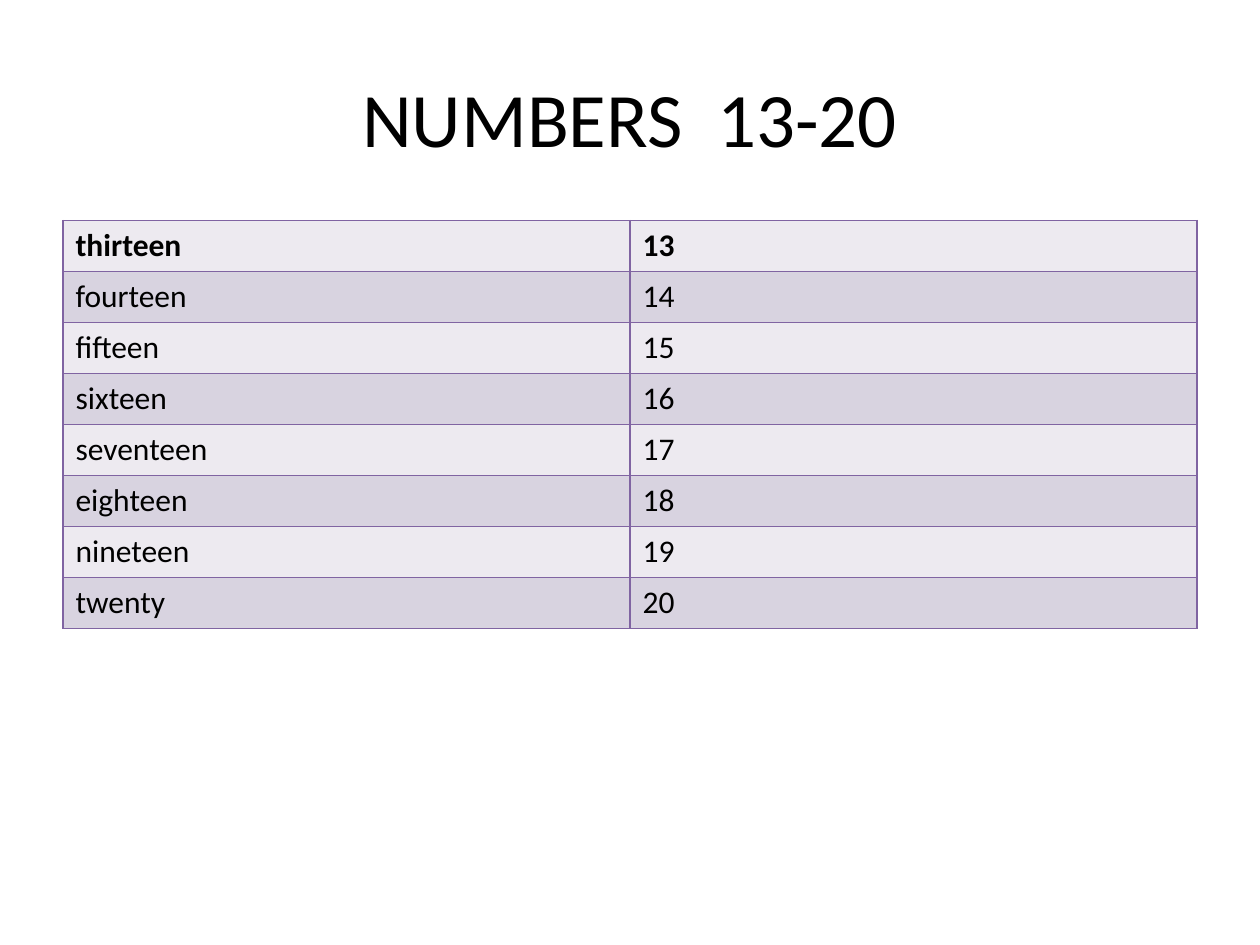
from lxml import etree
from pptx import Presentation
from pptx.dml.color import RGBColor
from pptx.enum.text import MSO_ANCHOR, PP_ALIGN
from pptx.oxml.ns import qn
from pptx.util import Inches, Pt

CENTER, LEFT = PP_ALIGN.CENTER, PP_ALIGN.LEFT
MIDDLE = MSO_ANCHOR.MIDDLE

TITLE = "NUMBERS  13-20"
FIRST_NUMBER = 13
NUMBER_WORDS = ["thirteen", "fourteen", "fifteen", "sixteen",
                "seventeen", "eighteen", "nineteen", "twenty"]

COLORS = {"text": "000000", "border": "8064A2",
          "light_band": "EDEAF0", "dark_band": "D8D3E0"}
FONT = "Calibri"
MARGIN, CONTENT_WIDTH = 0.5, 9
TITLE_TOP, TITLE_HEIGHT = 0.3, 1.25
TABLE_TOP, TABLE_HEIGHT = 1.75, 3.24


def write_text(text_frame, text, size=18, bold=False, align=LEFT):
    paragraph = text_frame.paragraphs[0]
    paragraph.alignment = align
    run = paragraph.add_run()
    run.text = text
    run.font.name = FONT
    run.font.size = Pt(size)
    run.font.bold = bold
    run.font.color.rgb = RGBColor.from_string(COLORS["text"])


def set_borders(cell, color, width=1):
    properties = cell._tc.get_or_add_tcPr()
    for position, side in enumerate(("lnL", "lnR", "lnT", "lnB")):
        line = etree.Element(qn(f"a:{side}"), w=str(Pt(width)))
        fill = etree.SubElement(line, qn("a:solidFill"))
        etree.SubElement(fill, qn("a:srgbClr"), val=color)
        properties.insert(position, line)


def add_title(slide):
    title = slide.shapes.add_textbox(Inches(MARGIN), Inches(TITLE_TOP),
                                     Inches(CONTENT_WIDTH), Inches(TITLE_HEIGHT))
    title.text_frame.word_wrap = True
    title.text_frame.vertical_anchor = MIDDLE
    write_text(title.text_frame, TITLE, size=44, align=CENTER)


def add_number_table(slide):
    rows = [(word, str(number))
            for number, word in enumerate(NUMBER_WORDS, FIRST_NUMBER)]
    table = slide.shapes.add_table(
        len(rows), 2, Inches(MARGIN), Inches(TABLE_TOP),
        Inches(CONTENT_WIDTH), Inches(TABLE_HEIGHT)).table
    for row_index, row in enumerate(rows):
        band = "dark_band" if row_index % 2 else "light_band"
        for column_index, text in enumerate(row):
            cell = table.cell(row_index, column_index)
            cell.fill.solid()
            cell.fill.fore_color.rgb = RGBColor.from_string(COLORS[band])
            set_borders(cell, COLORS["border"])
            write_text(cell.text_frame, text, bold=row_index == 0)


def main():
    presentation = Presentation()
    presentation.slide_width = Inches(10)
    presentation.slide_height = Inches(7.5)
    slide = presentation.slides.add_slide(presentation.slide_layouts[6])
    add_title(slide)
    add_number_table(slide)
    presentation.save("out.pptx")


if __name__ == "__main__":
    main()
